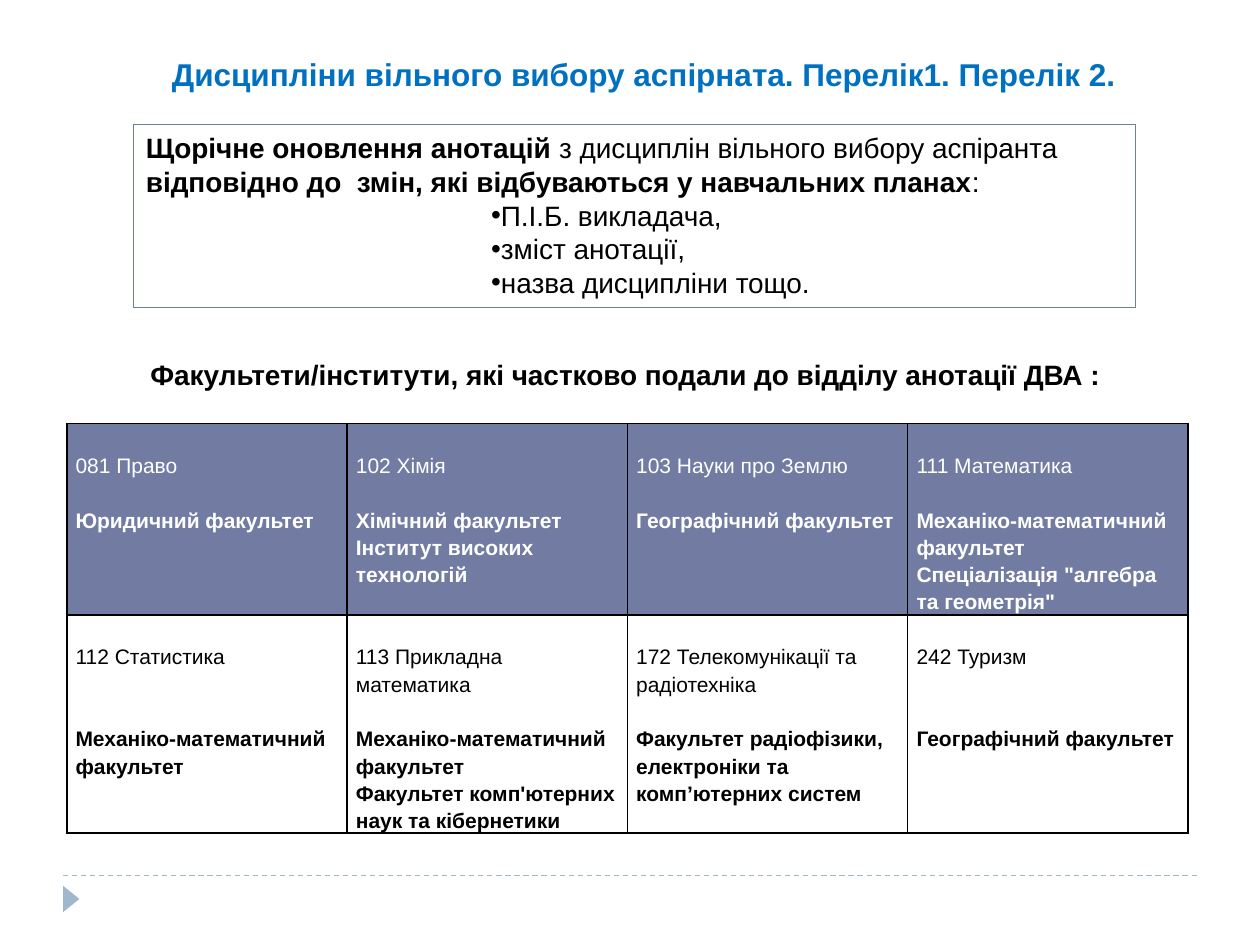
from dataclasses import dataclass

from lxml import etree
from pptx import Presentation
from pptx.dml.color import RGBColor
from pptx.enum import dml, shapes, text
from pptx.oxml.ns import qn
from pptx.util import Inches, Pt


@dataclass(frozen=True)
class Theme:
    font: str = "Arial"
    title_size: float = 18
    body_size: float = 16
    cell_size: float = 12
    cell_leading: float = 15.6
    title: str = "0070C0"
    ink: str = "000000"
    paper: str = "FFFFFF"
    header: str = "727CA3"
    accent: str = "9FB8CD"


@dataclass(frozen=True)
class Specialty:
    name: str
    units: tuple[str, ...]
    gap_lines: int = 1


THEME = Theme()
MATH = "Механіко-математичний факультет"
GEOGRAPHY = "Географічний факультет"
ROWS = (
    (
        Specialty("081 Право", ("Юридичний факультет",)),
        Specialty("102 Хімія", ("Хімічний факультет", "Інститут високих технологій")),
        Specialty("103 Науки про Землю", (GEOGRAPHY,)),
        Specialty("111 Математика", (MATH, 'Спеціалізація "алгебра та геометрія"')),
    ),
    (
        Specialty("112 Статистика", (MATH,), 2),
        Specialty("113 Прикладна математика",
                  (MATH, "Факультет комп'ютерних наук та кібернетики")),
        Specialty("172 Телекомунікації та радіотехніка",
                  ("Факультет радіофізики, електроніки та комп’ютерних систем",)),
        Specialty("242 Туризм", (GEOGRAPHY,), 2),
    ),
)
ROW_HEIGHTS = (1.52, 1.73)
ANNOTATION_FIELDS = ("П.І.Б. викладача,", "зміст анотації,", "назва дисципліни тощо.")


def rgb(value: str) -> RGBColor:
    return RGBColor.from_string(value)


def add_run(p, content: str, *, size: float = THEME.body_size,
            color: str = THEME.ink, bold: bool = False) -> None:
    r = p.add_run()
    r.text = content
    r.font.name = THEME.font
    r.font.size = Pt(size)
    r.font.bold = bold
    r.font.color.rgb = rgb(color)


def next_paragraph(tf):
    """Return the unused first paragraph, or a new one."""
    first = tf.paragraphs[0]
    return tf.add_paragraph() if first.runs else first


def add_bullet(p, left: float, indent: float) -> None:
    pPr = p._p.get_or_add_pPr()
    pPr.set("marL", str(Inches(left)))
    pPr.set("indent", str(Inches(indent)))
    etree.SubElement(pPr, qn("a:buFont"), typeface=THEME.font)
    etree.SubElement(pPr, qn("a:buChar"), char="•")


def add_text_box(slide, left: float, top: float, width: float, height: float):
    sp = slide.shapes.add_textbox(Inches(left), Inches(top), Inches(width), Inches(height))
    sp.text_frame.word_wrap = True
    sp.text_frame.auto_size = text.MSO_AUTO_SIZE.SHAPE_TO_FIT_TEXT
    return sp


def add_heading(slide, content: str, left: float, top: float, width: float,
                height: float, **font) -> None:
    p = add_text_box(slide, left, top, width, height).text_frame.paragraphs[0]
    p.alignment = text.PP_ALIGN.CENTER
    add_run(p, content, bold=True, **font)


def add_footer(slide) -> None:
    line = slide.shapes.add_connector(shapes.MSO_CONNECTOR.STRAIGHT, Inches(0.5),
                                      Inches(6.95), Inches(9.5), Inches(6.95))
    line.line.color.rgb = rgb(THEME.accent)
    line.line.width = Pt(0.75)
    line.line.dash_style = dml.MSO_LINE.DASH
    etree.SubElement(line._element.spPr, qn("a:effectLst"))

    marker = slide.shapes.add_shape(shapes.MSO_SHAPE.ISOSCELES_TRIANGLE, Inches(0.46),
                                    Inches(7.07), Inches(0.21), Inches(0.13))
    marker.rotation = 90
    marker.shadow.inherit = False
    marker.fill.solid()
    marker.fill.fore_color.rgb = rgb(THEME.accent)
    marker.line.fill.background()


def add_update_box(slide) -> None:
    sp = add_text_box(slide, 1.06, 0.99, 7.95, 1.45)
    sp.line.color.rgb = rgb(THEME.header)
    sp.line.width = Pt(0.75)
    tf = sp.text_frame
    p = tf.paragraphs[0]
    for content, bold in (
        ("Щорічне оновлення анотацій ", True),
        ("з дисциплін вільного вибору аспіранта ", False),
        ("відповідно до  змін, які відбуваються у навчальних планах", True),
        (":", False),
    ):
        add_run(p, content, bold=bold)
    for field in ANNOTATION_FIELDS:
        p = next_paragraph(tf)
        add_bullet(p, 2.45, 0.29)
        add_run(p, field)


def set_borders(cell) -> None:
    tcPr = cell._tc.get_or_add_tcPr()
    for side in ("lnL", "lnR", "lnT", "lnB"):
        ln = etree.SubElement(tcPr, qn(f"a:{side}"), w=str(Pt(1)))
        fill = etree.SubElement(ln, qn("a:solidFill"))
        etree.SubElement(fill, qn("a:srgbClr"), val=THEME.ink)


def fill_cell(cell, specialty: Specialty, color: str, background: str) -> None:
    set_borders(cell)
    cell.fill.solid()
    cell.fill.fore_color.rgb = rgb(background)
    cell.margin_left = cell.margin_right = Inches(0.07)
    cell.margin_top = Pt(THEME.cell_leading)
    cell.margin_bottom = 0
    for i, content in enumerate((specialty.name, *specialty.units)):
        p = next_paragraph(cell.text_frame)
        p.line_spacing = Pt(THEME.cell_leading)
        if i == 1:
            p.space_before = Pt(THEME.cell_leading * specialty.gap_lines)
        add_run(p, content, size=THEME.cell_size, color=color, bold=i > 0)


def add_specialty_table(slide) -> None:
    table = slide.shapes.add_table(len(ROWS), len(ROWS[0]), Inches(0.53), Inches(3.36),
                                   Inches(8.9), Inches(sum(ROW_HEIGHTS))).table
    table.first_row = table.horz_banding = False
    palettes = ((THEME.paper, THEME.header), (THEME.ink, THEME.paper))
    for r, (row, height, palette) in enumerate(zip(ROWS, ROW_HEIGHTS, palettes)):
        table.rows[r].height = Inches(height)
        for c, specialty in enumerate(row):
            fill_cell(table.cell(r, c), specialty, *palette)


def main() -> None:
    prs = Presentation()
    prs.slide_width, prs.slide_height = Inches(10), Inches(7.5)
    slide = prs.slides.add_slide(prs.slide_layouts[6])
    add_footer(slide)
    add_update_box(slide)
    add_heading(slide, "Дисципліни вільного вибору аспірната. Перелік1. Перелік 2.",
                1.06, 0.39, 8.1, 0.4, size=THEME.title_size, color=THEME.title)
    add_heading(slide, "Факультети/інститути, які частково подали до відділу анотації ДВА :",
                0.79, 2.79, 8.35, 0.37)
    add_specialty_table(slide)
    prs.save("out.pptx")


if __name__ == "__main__":
    main()
